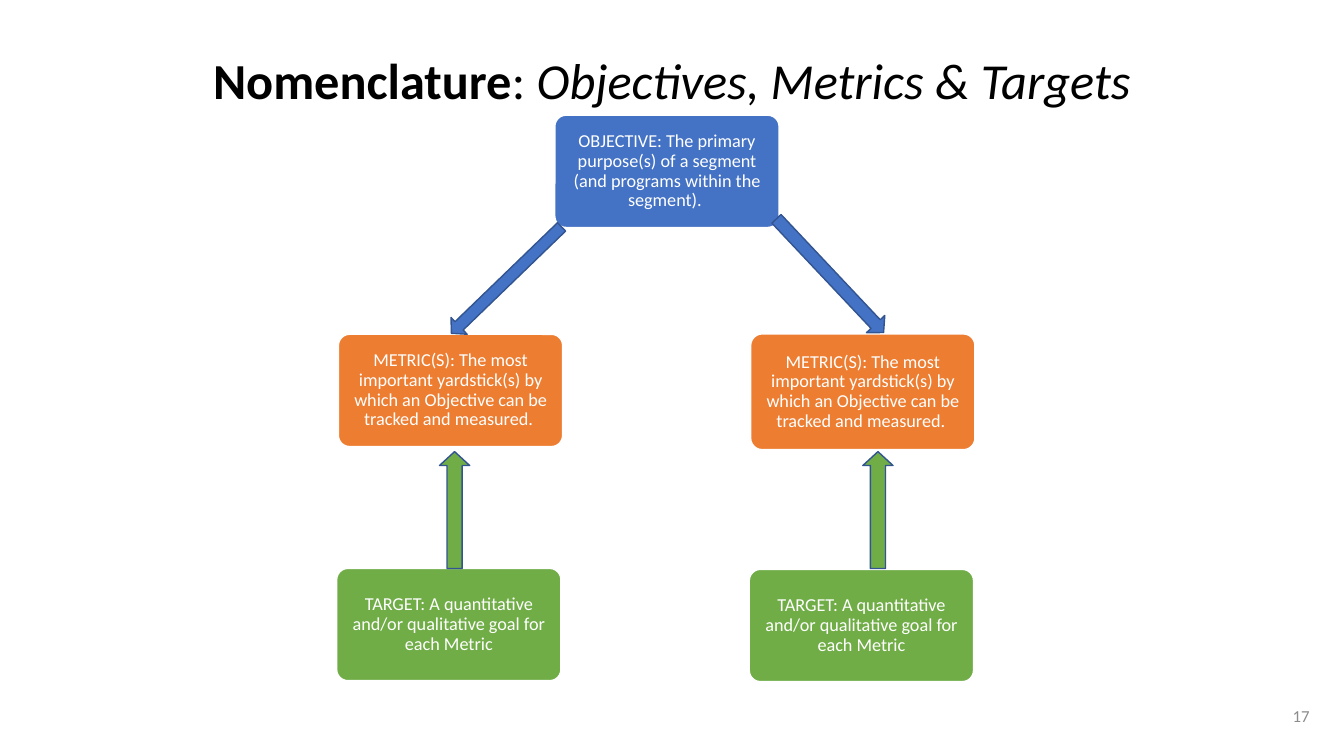
from dataclasses import dataclass

from pptx import Presentation
from pptx.dml.color import RGBColor
from pptx.enum.shapes import MSO_SHAPE
from pptx.enum.text import MSO_ANCHOR, PP_ALIGN
from pptx.util import Pt

ROUNDED = MSO_SHAPE.ROUNDED_RECTANGLE
DOWN_ARROW = MSO_SHAPE.DOWN_ARROW
MIDDLE = MSO_ANCHOR.MIDDLE
CENTER = PP_ALIGN.CENTER
RIGHT = PP_ALIGN.RIGHT

BLACK = RGBColor(0x00, 0x00, 0x00)
WHITE = RGBColor(0xFF, 0xFF, 0xFF)
GRAY = RGBColor(0x8C, 0x8C, 0x8C)
BLUE = RGBColor(0x44, 0x72, 0xC4)
ORANGE = RGBColor(0xED, 0x7D, 0x31)
GREEN = RGBColor(0x70, 0xAD, 0x47)
OUTLINE = RGBColor(0x32, 0x54, 0x91)

FONT = "Calibri"
BOX_WIDTH = 160.2
BOX_MARGIN = 4

OBJECTIVE = "OBJECTIVE: The primary purpose(s) of a segment (and programs within the segment). "
METRIC = ("METRIC(S): The most important yardstick(s) by which an Objective "
          "can be tracked and measured. ")
TARGET = "TARGET: A quantitative and/or qualitative goal for each Metric"


@dataclass
class Box:
    text: str
    fill: RGBColor
    left: float
    top: float
    height: float = 80.2


@dataclass
class Arrow:
    fill: RGBColor
    left: float
    top: float
    width: float
    height: float
    rotation: float


BOXES = [
    Box(OBJECTIVE, BLUE, 396.3, 82.3),
    Box(TARGET, GREEN, 535.2, 406.7),
    Box(TARGET, GREEN, 240.5, 406),
    Box(METRIC, ORANGE, 241.7, 238.8),
    Box(METRIC, ORANGE, 536.2, 238.5, 82.7),
]

ARROWS = [
    Arrow(BLUE, 583.9, 141.1, 18, 111.6, 316.7),
    Arrow(GREEN, 313.9, 322.6, 21.6, 83.5, 180),
    Arrow(GREEN, 616.3, 322.6, 21.6, 83.5, 180),
    Arrow(BLUE, 353.5, 145.4, 16.6, 109.4, 46),
]


def paint(sp, fill: RGBColor, line: RGBColor) -> None:
    sp.shadow.inherit = False
    sp.fill.solid()
    sp.fill.fore_color.rgb = fill
    sp.line.color.rgb = line
    sp.line.width = Pt(1)


def format_paragraph(p, size: float, color: RGBColor, align: PP_ALIGN,
                     spacing: float = 1.0) -> None:
    p.alignment = align
    p.line_spacing = spacing
    p.font.name = FONT
    p.font.size = Pt(size)
    p.font.color.rgb = color


def add_title(s) -> None:
    sp = s.shapes.title
    sp.left, sp.top, sp.width, sp.height = Pt(66), Pt(28.8), Pt(828), Pt(61.9)
    tf = sp.text_frame
    tf.word_wrap = True
    tf.vertical_anchor = MIDDLE
    p = tf.paragraphs[0]
    format_paragraph(p, 36, BLACK, CENTER, 0.9)
    for text, bold, italic in (("Nomenclature", True, False),
                               (": ", False, False),
                               ("Objectives, Metrics & Targets", False, True)):
        r = p.add_run()
        r.text = text
        r.font.bold = bold
        r.font.italic = italic


def add_box(s, box: Box) -> None:
    sp = s.shapes.add_shape(ROUNDED, Pt(box.left), Pt(box.top),
                            Pt(BOX_WIDTH), Pt(box.height))
    sp.adjustments[0] = 0.1
    paint(sp, box.fill, WHITE)
    tf = sp.text_frame
    tf.word_wrap = True
    tf.vertical_anchor = MIDDLE
    tf.margin_left = tf.margin_right = Pt(BOX_MARGIN)
    tf.margin_top = tf.margin_bottom = Pt(BOX_MARGIN)
    p = tf.paragraphs[0]
    p.text = box.text
    format_paragraph(p, 13, WHITE, CENTER, 0.9)


def add_arrow(s, arrow: Arrow) -> None:
    sp = s.shapes.add_shape(DOWN_ARROW, Pt(arrow.left), Pt(arrow.top),
                            Pt(arrow.width), Pt(arrow.height))
    sp.adjustments[0] = 0.5
    sp.adjustments[1] = 0.46
    sp.rotation = arrow.rotation
    paint(sp, arrow.fill, OUTLINE)


def add_slide_number(s, number: str) -> None:
    sp = s.shapes.add_textbox(Pt(726.5), Pt(496.8), Pt(216), Pt(28.8))
    tf = sp.text_frame
    tf.word_wrap = True
    tf.vertical_anchor = MIDDLE
    p = tf.paragraphs[0]
    p.text = number
    format_paragraph(p, 12, GRAY, RIGHT)


def main() -> None:
    prs = Presentation()
    prs.slide_width, prs.slide_height = Pt(960), Pt(540)
    s = prs.slides.add_slide(prs.slide_layouts[5])
    add_title(s)
    for box in BOXES:
        add_box(s, box)
    add_slide_number(s, "17")
    for arrow in ARROWS:
        add_arrow(s, arrow)
    prs.save("out.pptx")


if __name__ == "__main__":
    main()
